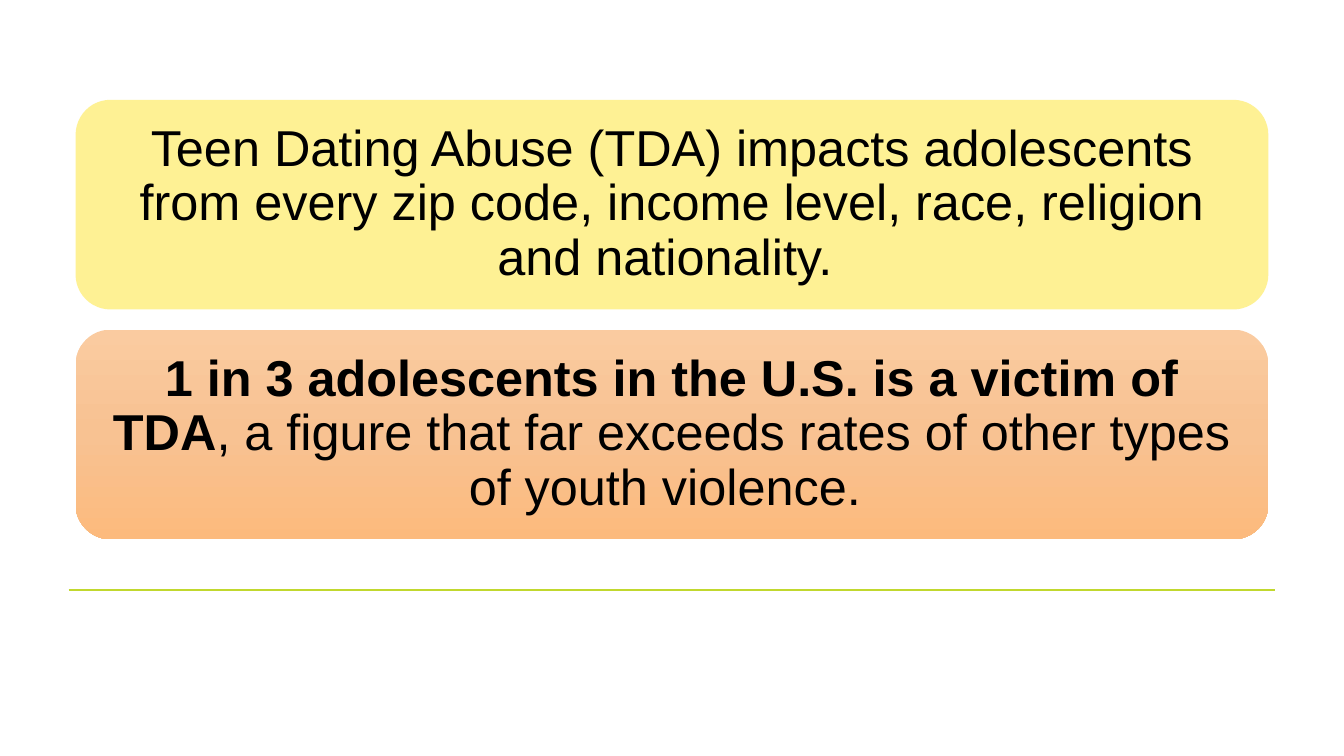
import copy
import pptx
import pptx.util
import pptx.dml.color
import pptx.enum.shapes
import pptx.enum.text
import pptx.oxml
import pptx.oxml.ns

Inches, Pt = pptx.util.Inches, pptx.util.Pt
RGB = pptx.dml.color.RGBColor
BLACK = RGB(0x00, 0x00, 0x00)
LIME = RGB(0xC1, 0xD8, 0x2E)
YELLOW = RGB(0xFE, 0xF1, 0x94)
PEACH = RGB(0xFA, 0xCB, 0xA0)
APRICOT = RGB(0xF8, 0xC2, 0x92)
ORANGE = RGB(0xFC, 0xBA, 0x7D)

CARDS = [
    ([("Teen Dating Abuse (TDA) impacts adolescents from every zip code, "
       "income level, race, religion and nationality. ", False)],
     [YELLOW]),
    ([("1 in 3 adolescents in the U.S. is a victim of TDA", True),
      (", a figure that far exceeds rates of other types of youth violence. ", False)],
     [PEACH, APRICOT, ORANGE]),
]
LEFT, TOP, WIDTH, HEIGHT, GAP = 0.75, 0.99, 11.83, 2.08, 0.2
RULE = (0.68, 5.85, 12.65, 5.85)


def write(para, text, bold=False, size=36, font="Arial", color=BLACK):
    run = para.add_run()
    run.text = text
    run.font.name = font
    run.font.size = Pt(size)
    run.font.bold = bold
    run.font.color.rgb = color


def paint(card, colors):
    fill = card.fill
    if len(colors) == 1:
        fill.solid()
        fill.fore_color.rgb = colors[0]
        return
    fill.gradient()
    fill.gradient_angle = 270
    stops = next(card._element.iter(pptx.oxml.ns.qn("a:gsLst")))
    while len(stops) < len(colors):
        stops.append(copy.deepcopy(stops[0]))
    for i, (stop, color) in enumerate(zip(fill.gradient_stops, colors)):
        stop.position = i / (len(colors) - 1)
        stop.color.rgb = color


def main():
    deck = pptx.Presentation()
    deck.slide_width, deck.slide_height = Inches(13.33), Inches(7.5)
    slide = deck.slides.add_slide(deck.slide_layouts[6])

    rule = slide.shapes.add_connector(
        pptx.enum.shapes.MSO_CONNECTOR.STRAIGHT, *map(Inches, RULE))
    rule.line.color.rgb = LIME
    rule.line.width = Pt(1.5)
    rule._element.spPr.append(pptx.oxml.parse_xml(
        "<a:effectLst %s/>" % pptx.oxml.ns.nsdecls("a")))

    for i, (runs, colors) in enumerate(CARDS):
        card = slide.shapes.add_shape(
            pptx.enum.shapes.MSO_SHAPE.ROUNDED_RECTANGLE, Inches(LEFT),
            Inches(TOP + i * (HEIGHT + GAP)), Inches(WIDTH), Inches(HEIGHT))
        card.shadow.inherit = False
        card.line.fill.background()
        paint(card, colors)
        frame = card.text_frame
        frame.word_wrap = True
        frame.vertical_anchor = pptx.enum.text.MSO_ANCHOR.MIDDLE
        frame.margin_left = frame.margin_right = Inches(0.15)
        frame.margin_top = frame.margin_bottom = Inches(0.15)
        para = frame.paragraphs[0]
        para.alignment = pptx.enum.text.PP_ALIGN.CENTER
        para.line_spacing = 0.9
        for text, bold in runs:
            write(para, text, bold=bold)

    deck.save("out.pptx")


if __name__ == "__main__":
    main()
